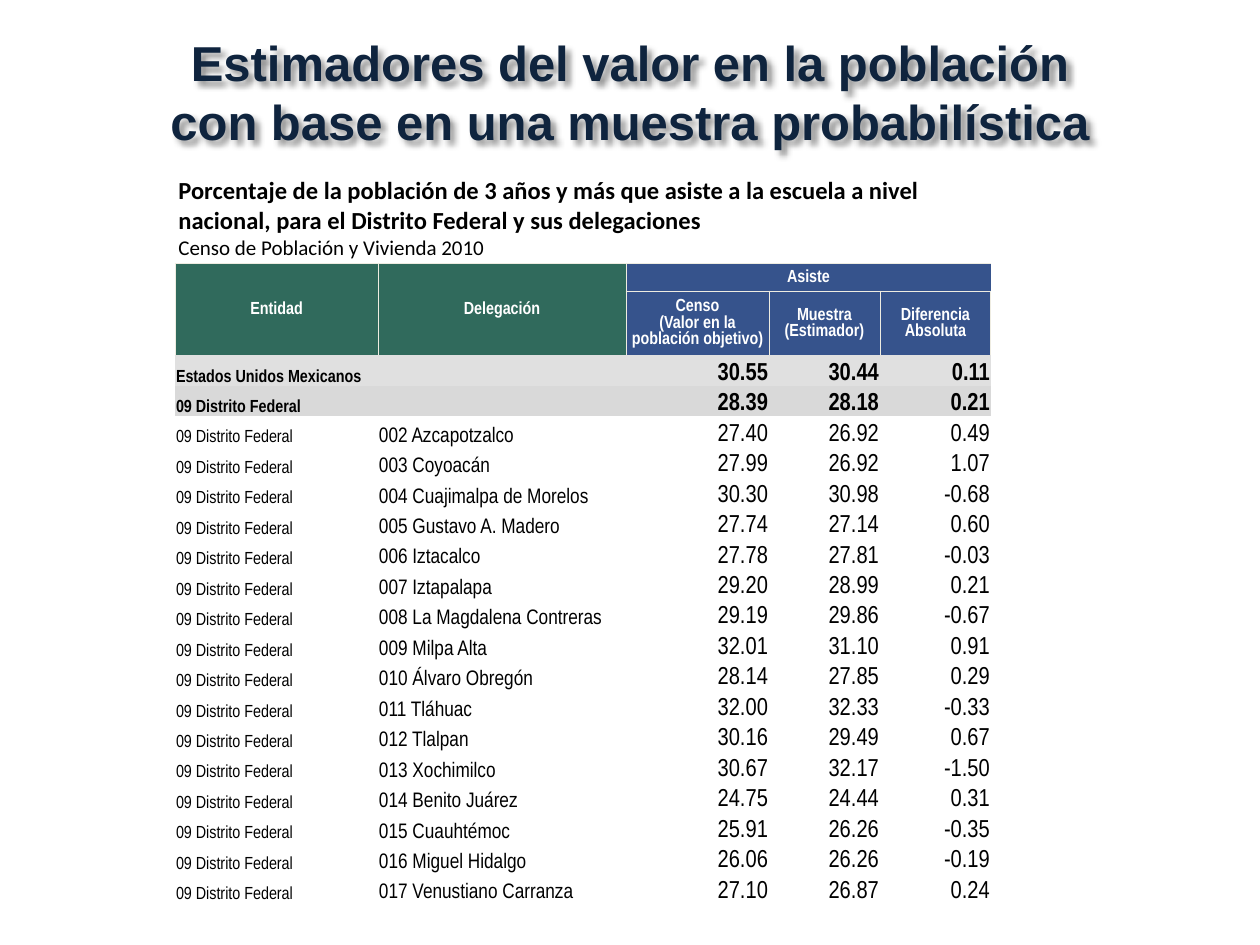
from dataclasses import dataclass
from lxml.etree import SubElement as Sub
from pptx import Presentation
from pptx.dml.color import RGBColor as RGB
from pptx.enum.text import MSO_ANCHOR as Anchor, PP_ALIGN as Align
from pptx.oxml.ns import qn
from pptx.util import Pt

PX = 914400 / 126  # EMU in one px


@dataclass(frozen=True)
class Theme:
    navy: str = "0F243E"
    green: str = "306A5C"
    blue: str = "36538C"
    rule: str = "EEECE1"
    light: str = "E0E0E0"
    grey: str = "D9D9D9"
    white: str = "FFFFFF"
    black: str = "000000"
    head: str = "Arial"
    body: str = "Calibri"
    grid: str = "Arial Narrow"
    huge: int = 28
    big: int = 14
    mid: int = 12
    small: int = 10


T = Theme()
PLAIN = "{2D5ABB26-0587-4C30-8999-92F81FD0307C}"  # table style without lines
COLS = (203, 248, 143, 111, 111)
ROWS = (28, 64) + (28,) * 18
CITY = "09 Distrito Federal"
TOTALS = [
    ("Estados Unidos Mexicanos", "", "30.55", "30.44", "0.11"),
    (CITY, "", "28.39", "28.18", "0.21"),
]
AREAS = [
    ("002 Azcapotzalco", "27.40", "26.92", "0.49"),
    ("003 Coyoacán", "27.99", "26.92", "1.07"),
    ("004 Cuajimalpa de Morelos", "30.30", "30.98", "-0.68"),
    ("005 Gustavo A. Madero", "27.74", "27.14", "0.60"),
    ("006 Iztacalco", "27.78", "27.81", "-0.03"),
    ("007 Iztapalapa", "29.20", "28.99", "0.21"),
    ("008 La Magdalena Contreras", "29.19", "29.86", "-0.67"),
    ("009 Milpa Alta", "32.01", "31.10", "0.91"),
    ("010 Álvaro Obregón", "28.14", "27.85", "0.29"),
    ("011 Tláhuac", "32.00", "32.33", "-0.33"),
    ("012 Tlalpan", "30.16", "29.49", "0.67"),
    ("013 Xochimilco", "30.67", "32.17", "-1.50"),
    ("014 Benito Juárez", "24.75", "24.44", "0.31"),
    ("015 Cuauhtémoc", "25.91", "26.26", "-0.35"),
    ("016 Miguel Hidalgo", "26.06", "26.26", "-0.19"),
    ("017 Venustiano Carranza", "27.10", "26.87", "0.24"),
]
# row, column, last row, last column, text, fill, sides with a rule, side inset
HEADS = [
    (0, 0, 1, 0, "Entidad", T.green, "LRTB", 1),
    (0, 1, 1, 1, "Delegación", T.green, "LRTB", 1),
    (0, 2, 0, 4, "Asiste", T.blue, "LTB", 1),
    (1, 2, 1, 2, "Censo\n(Valor en la población objetivo)", T.blue, "LRTB", 5),
    (1, 3, 1, 3, "Muestra\n(Estimador)", T.blue, "LRTB", 5),
    (1, 4, 1, 4, "Diferencia Absoluta", T.blue, "LRTB", 1),
]


def emu(px):
    return round(px * PX)


def style(para, face, size, tone, bold=False, align=Align.LEFT):
    para.alignment = align
    font = para.font
    font.name, font.size, font.bold = face, Pt(size), bold
    font.color.rgb = RGB.from_string(tone)


def add_text(slide, box, paras):
    shape = slide.shapes.add_textbox(*map(emu, box))
    frame = shape.text_frame
    frame.word_wrap = True
    for i, (text, *look) in enumerate(paras):
        para = frame.add_paragraph() if i else frame.paragraphs[0]
        para.text = text
        style(para, *look)
    return shape


def cast(shape):
    """Give the text of an unfilled box a soft drop shadow."""
    glow = Sub(shape._element.spPr, qn("a:effectLst"))
    drop = Sub(glow, qn("a:outerShdw"), blurRad="38100",
               dist="38100", dir="2700000", algn="tl", rotWithShape="0")
    tone = Sub(drop, qn("a:srgbClr"), val=T.black)
    Sub(tone, qn("a:alpha"), val="43000")


def edge(cell, sides, tone):
    props = cell._tc.get_or_add_tcPr()
    for side in sides:
        line = Sub(props, qn(f"a:ln{side}"), w=str(Pt(0.5)))
        Sub(Sub(line, qn("a:solidFill")), qn("a:srgbClr"), val=tone)


def paint(cell, tone):
    if tone:
        cell.fill.solid()
        cell.fill.fore_color.rgb = RGB.from_string(tone)
    else:
        cell.fill.background()


def write(cell, text, anchor, inset, *look):
    cell.text = text
    cell.vertical_anchor = anchor
    cell.margin_left = cell.margin_right = emu(inset)
    cell.margin_top, cell.margin_bottom = emu(1), 0
    for para in cell.text_frame.paragraphs:
        style(para, *look)


def add_heads(grid):
    for top, left, low, right, text, tone, sides, inset in HEADS:
        first = grid.cell(top, left)
        for r in range(top, low + 1):
            for c in range(left, right + 1):
                edge(grid.cell(r, c), sides, T.rule)
                paint(grid.cell(r, c), tone)
        if (top, left) != (low, right):
            first.merge(grid.cell(low, right))
        write(first, text, Anchor.MIDDLE, inset, T.grid, T.small, T.white,
              True, Align.CENTER)


def add_rows(grid):
    sizes = (T.small, T.mid) + (T.big,) * 3
    rows = TOTALS + [(CITY, *area) for area in AREAS]
    fills = [T.light, T.grey] + [None] * len(AREAS)
    for r, (row, tone) in enumerate(zip(rows, fills), 2):
        for c, (text, size) in enumerate(zip(row, sizes)):
            cell = grid.cell(r, c)
            if r == 2:
                edge(cell, "T", T.light)
            paint(cell, tone)
            write(cell, text, Anchor.BOTTOM, 1, T.grid, size, T.black,
                  bool(tone), Align.RIGHT if c > 1 else Align.LEFT)


def add_grid(slide):
    shape = slide.shapes.add_table(
        len(ROWS), len(COLS), emu(175), emu(263), emu(sum(COLS)), emu(640))
    grid = shape.table
    grid.first_row = grid.horz_banding = False
    grid._tbl.tblPr.find(qn("a:tableStyleId")).text = PLAIN
    for col, wide in zip(grid.columns, COLS):
        col.width = emu(wide)
    for row, high in zip(grid.rows, ROWS):
        row.height = emu(high)
    add_heads(grid)
    add_rows(grid)


def main():
    deck = Presentation()
    deck.slide_width, deck.slide_height = emu(1260), emu(945)
    slide = deck.slides.add_slide(deck.slide_layouts[6])

    # Caption above the table
    add_text(slide, (166, 169, 952, 97), [
        ("Porcentaje de la población de 3 años y más que asiste a la escuela "
         "a nivel\vnacional, para el Distrito Federal y sus delegaciones",
         T.body, T.big, T.black, True),
        ("Censo de Población y Vivienda 2010", T.body, T.mid, T.black),
    ])

    # Table of estimates
    add_grid(slide)

    # Title
    title = add_text(slide, (0, 26, 1260, 145), [
        ("Estimadores del valor en la población\v"
         "con base en una muestra probabilística",
         T.head, T.huge, T.navy, True, Align.CENTER)])
    cast(title)

    deck.save("out.pptx")


if __name__ == "__main__":
    main()
